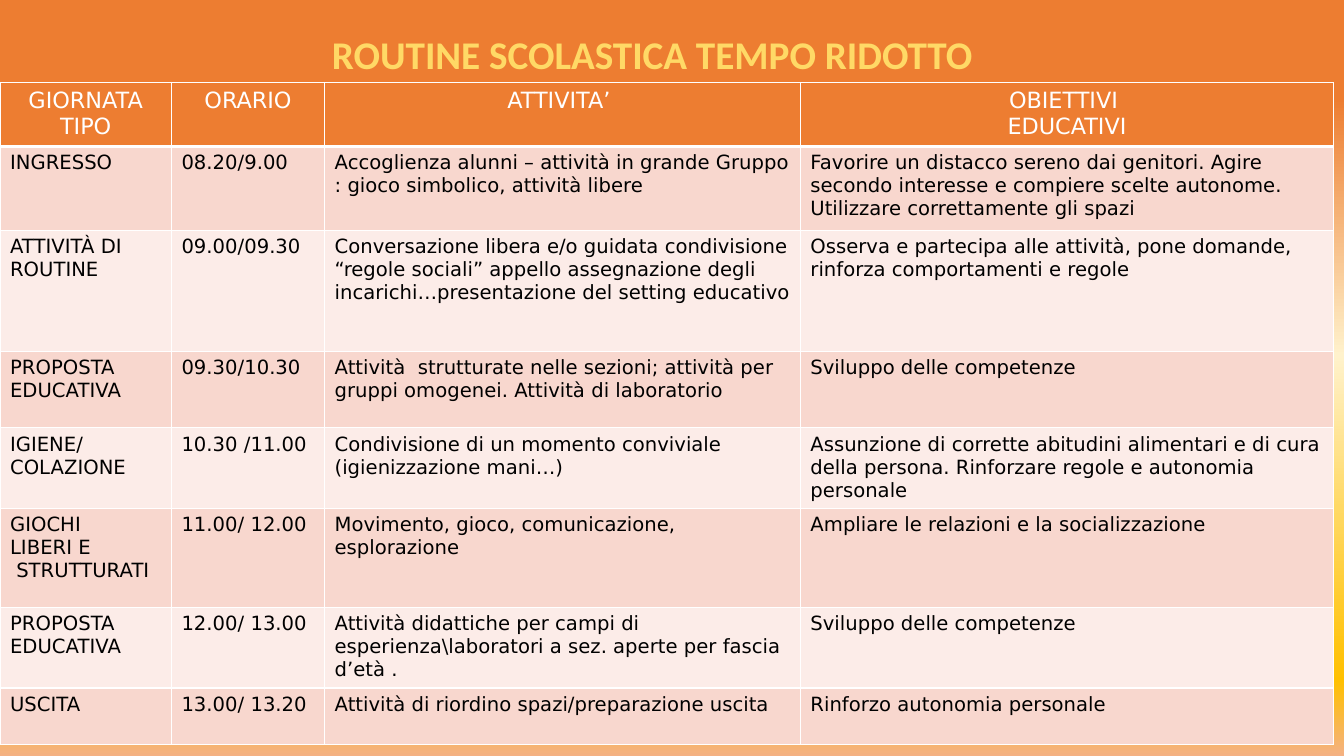
from lxml import etree
from pptx import Presentation
from pptx.dml.color import RGBColor
from pptx.enum.text import MSO_ANCHOR, PP_ALIGN
from pptx.oxml.ns import qn
from pptx.util import Cm, Pt

CENTER, LEFT = PP_ALIGN.CENTER, PP_ALIGN.LEFT
TOP = MSO_ANCHOR.TOP
WHITE = RGBColor(0xFF, 0xFF, 0xFF)
BLACK = RGBColor(0, 0, 0)
ORANGE = RGBColor(0xED, 0x7D, 0x31)
GOLD = RGBColor(0xFF, 0xD9, 0x66)
CREAM = RGBColor(0xFF, 0xF2, 0xCC)
AMBER = RGBColor(0xFF, 0xC0, 0x00)
PEACH = RGBColor(0xF4, 0xB1, 0x83)
ROSE = RGBColor(0xF8, 0xD7, 0xCE)
BLUSH = RGBColor(0xFC, 0xEC, 0xE8)

STOPS = [(13, ORANGE), (47, CREAM), (67, GOLD), (90, AMBER), (100, PEACH)]
TITLE = {"name": "Calibri", "size": Pt(28), "bold": True}
HEAD = {"name": "DejaVu Sans", "size": Pt(16), "bold": False}
BODY = {"name": "DejaVu Sans", "size": Pt(14), "bold": False}

COLS = [4.32, 3.86, 11.99, 13.44]
ROWS = [1.6, 2.11, 3.05, 1.93, 2.03, 2.49, 2.03, 1.42]
ROUTINE = [
    ["GIORNATA TIPO", "ORARIO", "ATTIVITA’ ", "OBIETTIVI \nEDUCATIVI"],
    ["INGRESSO", "08.20/9.00",
     "Accoglienza alunni – attività in grande Gruppo : gioco simbolico, attività libere",
     "Favorire un distacco sereno dai genitori. Agire\n"
     "secondo interesse e compiere scelte autonome.\n"
     "Utilizzare correttamente gli spazi"],
    ["ATTIVITÀ DI ROUTINE", "09.00/09.30",
     "Conversazione libera e/o guidata condivisione “regole sociali” "
     "appello assegnazione degli\nincarichi…presentazione del setting educativo",
     "Osserva e partecipa alle attività, pone domande, "
     "rinforza comportamenti e regole"],
    ["PROPOSTA EDUCATIVA", "09.30/10.30",
     "Attività  strutturate nelle sezioni; attività per\n"
     "gruppi omogenei. Attività di laboratorio",
     "Sviluppo delle competenze"],
    ["IGIENE/\nCOLAZIONE", "10.30 /11.00",
     "Condivisione di un momento conviviale (igienizzazione mani…)",
     "Assunzione di corrette abitudini alimentari e di cura della persona. "
     "Rinforzare regole e autonomia personale"],
    ["GIOCHI\nLIBERI E\n STRUTTURATI", "11.00/ 12.00",
     "Movimento, gioco, comunicazione, esplorazione",
     "Ampliare le relazioni e la socializzazione"],
    ["PROPOSTA EDUCATIVA", "12.00/ 13.00",
     "Attività didattiche per campi di esperienza\\laboratori a sez. aperte "
     "per fascia d’età .",
     "Sviluppo delle competenze"],
    ["USCITA", "13.00/ 13.20",
     "Attività di riordino spazi/preparazione uscita",
     "Rinforzo autonomia personale"],
]


class Board:
    def __init__(self, slide):
        self.slide = slide

    def back(self, stops):
        fill = self.slide.background.fill
        fill.gradient()
        fill.gradient_angle = 270
        marks = next(self.slide.element.iter(qn("a:gsLst")))
        for mark in list(marks):
            marks.remove(mark)
        for pos, color in stops:
            mark = etree.SubElement(marks, qn("a:gs"), pos=str(pos * 1000))
            etree.SubElement(mark, qn("a:srgbClr"), val=str(color))

    def label(self, frame, text, style, color, align):
        frame.text = text
        frame.word_wrap = True
        for para in frame.paragraphs:
            para.alignment = align
            for run in para.runs:
                for key, value in style.items():
                    setattr(run.font, key, value)
                run.font.color.rgb = color

    def title(self, text, left, top, width, height):
        box = self.slide.shapes.add_textbox(Cm(left), Cm(top), Cm(width), Cm(height))
        box.text_frame.vertical_anchor = TOP
        self.label(box.text_frame, text, TITLE, GOLD, CENTER)

    def edge(self, cell, widths):
        props = cell._tc.get_or_add_tcPr()
        for spot, (side, width) in enumerate(widths.items()):
            line = etree.Element(qn(f"a:ln{side}"), w=str(Pt(width)))
            solid = etree.SubElement(line, qn("a:solidFill"))
            etree.SubElement(solid, qn("a:srgbClr"), val=str(WHITE))
            props.insert(spot, line)

    def table(self, data, left, top, cols, rows):
        shape = self.slide.shapes.add_table(
            len(rows), len(cols), Cm(left), Cm(top), Cm(sum(cols)), Cm(sum(rows)))
        grid = shape.table
        for col, width in zip(grid.columns, cols):
            col.width = Cm(width)
        for num, (row, high, texts) in enumerate(zip(grid.rows, rows, data)):
            row.height = Cm(high)
            if num == 0:
                fill, style, color, align = ORANGE, HEAD, WHITE, CENTER
            else:
                fill, style, color, align = (BLUSH, ROSE)[num % 2], BODY, BLACK, LEFT
            widths = {"L": 1, "R": 1, "T": 3 if num == 1 else 1, "B": 3 if num == 0 else 1}
            for cell, text in zip(row.cells, texts):
                cell.fill.solid()
                cell.fill.fore_color.rgb = fill
                self.label(cell.text_frame, text, style, color, align)
                self.edge(cell, widths)


def main():
    deck = Presentation()
    deck.slide_width, deck.slide_height = Cm(33.87), Cm(19.05)
    board = Board(deck.slides.add_slide(deck.slide_layouts[6]))
    board.back(STOPS)
    board.title("ROUTINE SCOLASTICA TEMPO RIDOTTO", -0.38, 0.64, 33.63, 3.76)
    board.table(ROUTINE, 0, 2.08, COLS, ROWS)
    deck.save("out.pptx")


if __name__ == "__main__":
    main()
